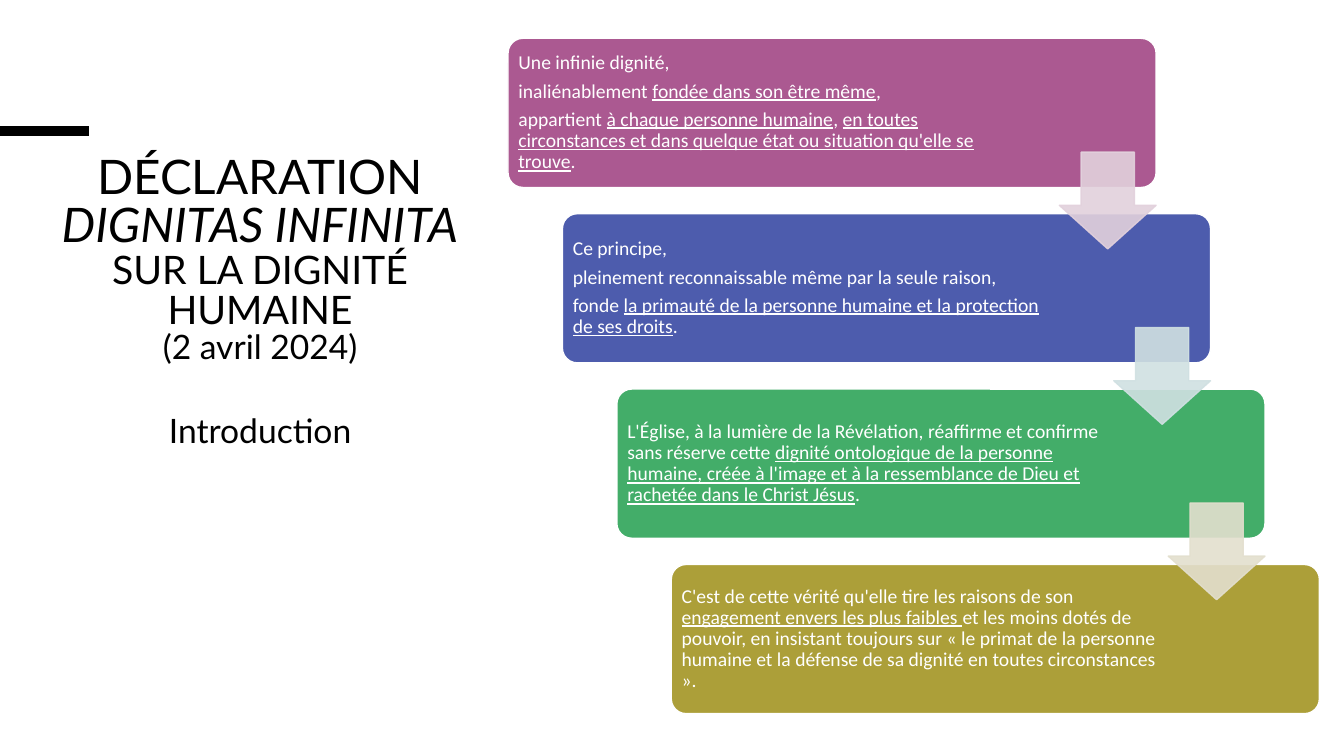
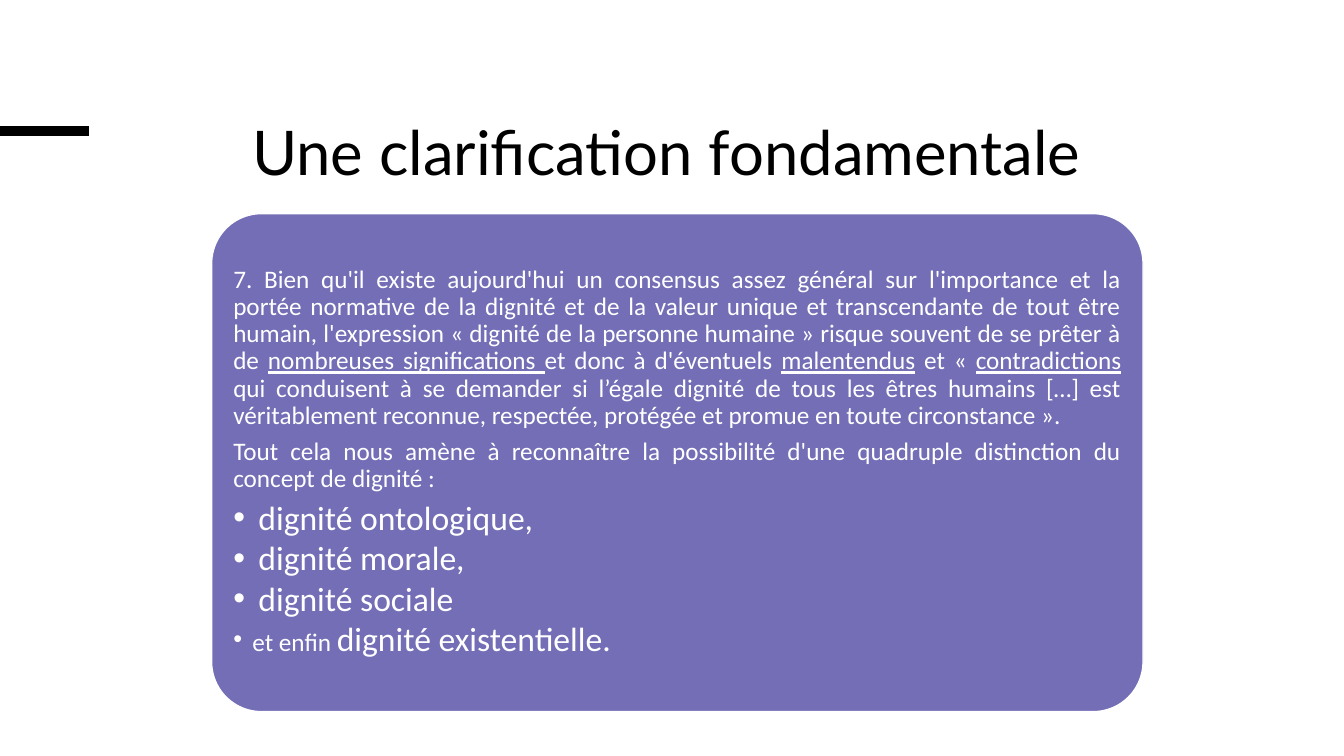
"""Build two slides on human dignity: a staircase of cards and a text panel."""
from lxml.etree import SubElement as Sub
from pptx import Presentation
from pptx.dml.color import RGBColor
from pptx.enum.shapes import MSO_CONNECTOR as Line, MSO_SHAPE as Kind
from pptx.enum.text import MSO_ANCHOR as Anchor, MSO_AUTO_SIZE as Fit, PP_ALIGN as Align
from pptx.oxml.ns import qn
from pptx.util import Pt

PX = 9144
WHITE, BLACK = "FFFFFF", "000000"
HEAD, BODY = "Lato", "Calibri"

INTRO = [
    ("DÉCLARATION", 34, False, 0),
    ("DIGNITAS INFINITA", 34, True, 0),
    ("SUR LA DIGNITÉ HUMAINE", 28, False, 0),
    ("(2 avril 2024)", 24, False, 0),
    ("Introduction", 24, False, 35),
]
CLARITY = [("Une clarification fondamentale", 44, False, 0)]

CARDS = [
    ("AB5991", 471, [
        "Une infinie dignité,",
        "inaliénablement _fondée dans son être même_,",
        "appartient _à chaque personne humaine_, _en toutes circonstances "
        "et dans quelque état ou situation qu'elle se trouve_.",
    ]),
    ("4D5CAD", 484, [
        "Ce principe,",
        "pleinement reconnaissable même par la seule raison,",
        "fonde _la primauté de la personne humaine et la protection "
        "de ses droits_.",
    ]),
    ("43AD69", 484, [
        "L'Église, à la lumière de la Révélation, réaffirme et confirme sans "
        "réserve cette _dignité ontologique de la personne humaine, créée à "
        "l'image et à la ressemblance de Dieu et rachetée dans le Christ Jésus_.",
    ]),
    ("AC9F39", 484, [
        "C'est de cette vérité qu'elle tire les raisons de son _engagement "
        "envers les plus faibles _et les moins dotés de pouvoir, en insistant "
        "toujours sur « le primat de la personne humaine et la défense de sa "
        "dignité en toutes circonstances ».",
    ]),
]
ARROWS = ["E2D1DC", "D0E0E2", "E3DFCE"]
LEFT, TOP, WIDE, HIGH = 504, 38, 643, 148
STEP_X, STEP_Y = 54, 174
ARROW_X, ARROW_Y, ARROW = 547, 113, 96

PANEL = [
    "7. Bien qu'il existe aujourd'hui un consensus assez général sur "
    "l'importance et la portée normative de la dignité et de la valeur unique "
    "et transcendante de tout être humain, l'expression « dignité de la "
    "personne humaine » risque souvent de se prêter à de _nombreuses "
    "significations _et donc à d'éventuels _malentendus_ et « _contradictions_ "
    "qui conduisent à se demander si l’égale dignité de tous les êtres humains "
    "[…] est véritablement reconnue, respectée, protégée et promue en toute "
    "circonstance ».",
    "Tout cela nous amène à reconnaître la possibilité d'une quadruple "
    "distinction du concept de dignité :",
]
KINDS = [
    (25, [("dignité ontologique,", 24)]),
    (25, [("dignité morale,", 24)]),
    (25, [("dignité sociale", 24)]),
    (19, [("et enfin ", 18), ("dignité existentielle.", 24)]),
]


def px(*nums):
    return [round(n * PX) for n in nums]


def rgb(code):
    return RGBColor.from_string(code)


def style(font, name, size, color):
    font.name, font.size = name, Pt(size)
    font.color.rgb = rgb(color)


def paras(frame):
    yield frame.paragraphs[0]
    while True:
        yield frame.add_paragraph()


def start(deck, box, lines):
    slide = deck.slides.add_slide(deck.slide_layouts[5])
    title = slide.shapes.title
    title.left, title.top, title.width, title.height = px(*box)
    frame = title.text_frame
    frame.auto_size, frame.vertical_anchor = Fit.NONE, Anchor.TOP
    for (text, size, slant, gap), para in zip(lines, paras(frame)):
        para.text = text
        para.alignment, para.line_spacing = Align.CENTER, 0.85
        para.space_before = Pt(gap)
        style(para.font, HEAD, size, BLACK)
        para.font.italic = slant
    rule = slide.shapes.add_connector(Line.STRAIGHT, *px(0, 130, 88, 130))
    rule.line.color.rgb, rule.line.width = rgb(BLACK), Pt(6.75)
    Sub(rule._element.spPr, qn("a:effectLst"))
    return slide


def block(slide, kind, box, fill, edge, bends):
    shape = slide.shapes.add_shape(kind, *px(*box))
    shape.shadow.inherit = False
    for i, bend in enumerate(bends):
        shape.adjustments[i] = bend
    shape.fill.solid()
    shape.fill.fore_color.rgb = rgb(fill)
    shape.line.color.rgb, shape.line.width = rgb(edge), Pt(1)
    return shape


def card(slide, box, fill, pad, right):
    shape = block(slide, Kind.ROUNDED_RECTANGLE, box, fill, WHITE, [0.1])
    frame = shape.text_frame
    frame.word_wrap, frame.vertical_anchor = True, Anchor.MIDDLE
    frame.margin_left, frame.margin_top, frame.margin_bottom = px(pad, pad, pad)
    frame.margin_right, = px(right)
    return frame


def setup(para, size, align, gap):
    para.alignment, para.line_spacing = align, 0.9
    para.space_after = Pt(gap)
    style(para.font, BODY, size, WHITE)


def write(para, text):
    for i, part in enumerate(text.split("_")):
        if part:
            run = para.add_run()
            run.text = part
            if i % 2:
                run.font.underline = True


def bullet(para, dent):
    props = para._p.get_or_add_pPr()
    size, = px(dent)
    props.set("marL", str(size))
    props.set("indent", str(-size))
    Sub(props, qn("a:buFont")).set("typeface", "Arial")
    Sub(props, qn("a:buChar")).set("char", "•")
    fonts = props.find(qn("a:defRPr"))
    if fonts is not None:
        props.append(fonts)


def stairs(deck):
    slide = start(deck, (12, 149, 492, 300), INTRO)
    spots = [(LEFT + STEP_X * i, TOP + STEP_Y * i) for i in range(len(CARDS))]
    for (x, y), (fill, span, texts) in zip(spots, CARDS):
        frame = card(slide, (x, y, WIDE, HIGH), fill, 6, WIDE - span - 3)
        for text, para in zip(texts, paras(frame)):
            setup(para, 14, Align.LEFT, 5)
            write(para, text)
    for (x, y), tint in zip(spots, ARROWS):
        box = (x + ARROW_X, y + ARROW_Y, ARROW, ARROW)
        arrow = block(slide, Kind.DOWN_ARROW, box, tint, tint, [0.55, 0.45])
        for hue in arrow._element.spPr.iter(qn("a:srgbClr")):
            Sub(hue, qn("a:alpha")).set("val", "90000")


def panel(deck):
    slide = start(deck, (119, 119, 1085, 142), CLARITY)
    frame = card(slide, (210, 212, 924, 494), "736EB6", 7, 7)
    rows = paras(frame)
    for text in PANEL:
        para = next(rows)
        setup(para, 18, Align.JUSTIFY, 6)
        write(para, text)
    for dent, parts in KINDS:
        para = next(rows)
        setup(para, parts[0][1], Align.JUSTIFY, 3)
        bullet(para, dent)
        for text, size in parts:
            run = para.add_run()
            run.text, run.font.size = text, Pt(size)


def main():
    deck = Presentation()
    deck.slide_width, deck.slide_height = px(1333.33, 750)
    stairs(deck)
    panel(deck)
    deck.save("out.pptx")


if __name__ == "__main__":
    main()
